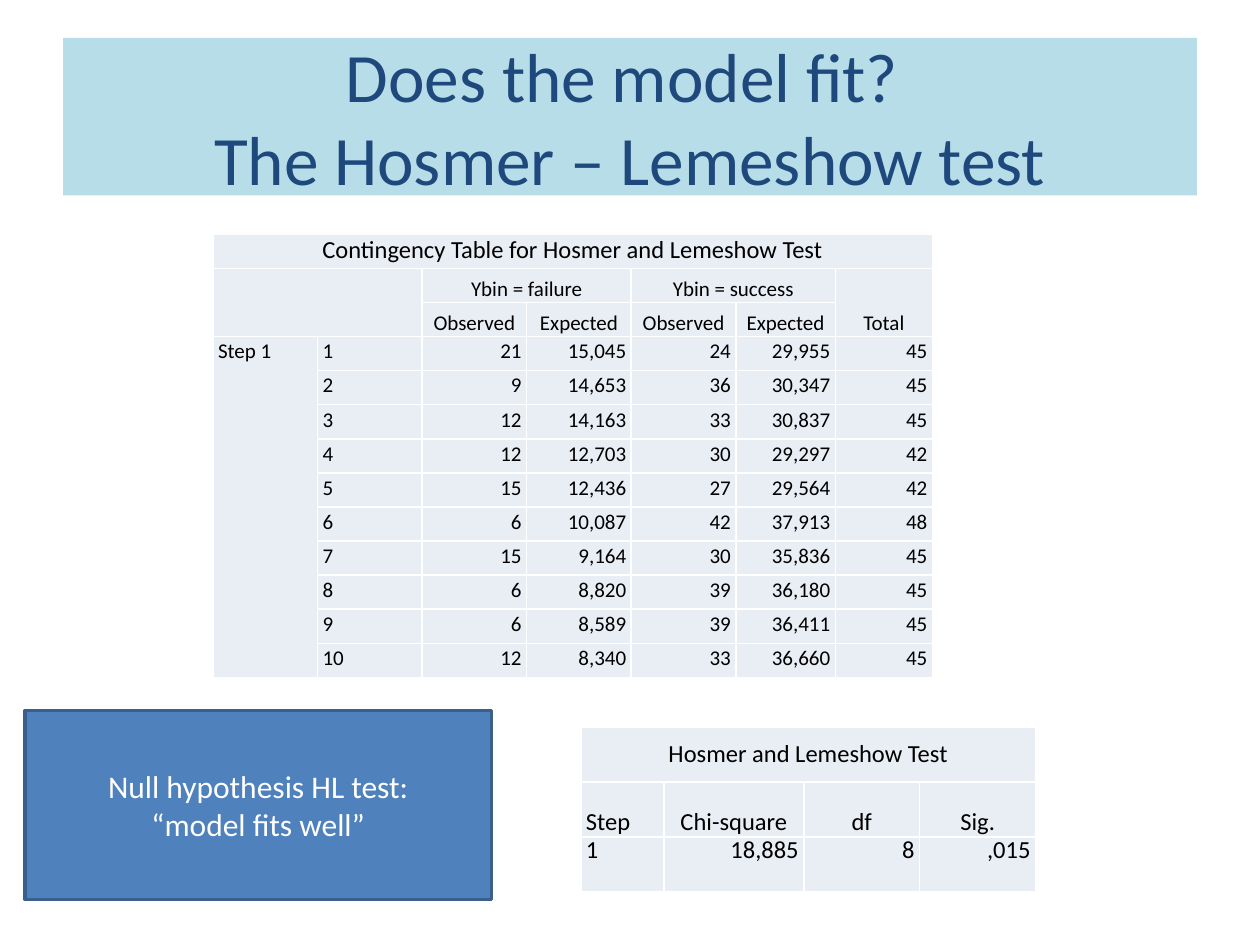
from dataclasses import dataclass

from lxml.etree import SubElement as Sub
from pptx import Presentation
from pptx.dml.color import RGBColor as Rgb
from pptx.enum.shapes import MSO_SHAPE as Kind
from pptx.enum.text import MSO_ANCHOR as Anchor, MSO_AUTO_SIZE as Auto, PP_ALIGN as Align
from pptx.oxml.ns import qn
from pptx.util import Inches, Pt


@dataclass(frozen=True)
class Theme:
    font: str = "Calibri"
    band: str = "B7DEE8"
    navy: str = "1F497D"
    cell: str = "E9EDF4"
    blue: str = "4F81BD"
    edge: str = "3A5F8C"
    white: str = "FFFFFF"
    black: str = "000000"
    title: float = 39.6
    note: float = 18
    large: float = 14
    small: float = 12
    line: float = 16
    indent: float = 0.04


@dataclass(frozen=True)
class Box:
    left: float
    top: float
    width: float
    height: float

    def place(self) -> tuple:
        return tuple(map(Inches, (self.left, self.top, self.width, self.height)))


@dataclass(frozen=True)
class Grid:
    box: Box
    cols: tuple
    rows: tuple
    spans: tuple
    heads: int
    labels: int
    size: float


LOOK = Theme()

FIT = Grid(
    box=Box(1.69, 1.86, 5.71, 3.52),
    cols=(0.83,) * 5 + (0.79, 0.77),
    rows=(
        ("Contingency Table for Hosmer and Lemeshow Test", "", "", "", "", "", ""),
        ("", "", "Ybin = failure", "", "Ybin = success", "", "Total"),
        ("", "", "Observed", "Expected", "Observed", "Expected", ""),
        ("Step 1", "1", "21", "15,045", "24", "29,955", "45"),
        ("", "2", "9", "14,653", "36", "30,347", "45"),
        ("", "3", "12", "14,163", "33", "30,837", "45"),
        ("", "4", "12", "12,703", "30", "29,297", "42"),
        ("", "5", "15", "12,436", "27", "29,564", "42"),
        ("", "6", "6", "10,087", "42", "37,913", "48"),
        ("", "7", "15", "9,164", "30", "35,836", "45"),
        ("", "8", "6", "8,820", "39", "36,180", "45"),
        ("", "9", "6", "8,589", "39", "36,411", "45"),
        ("", "10", "12", "8,340", "33", "36,660", "45"),
    ),
    spans=((0, 0, 0, 6), (1, 0, 2, 1), (1, 2, 1, 3), (1, 4, 1, 5), (1, 6, 2, 6), (3, 0, 12, 0)),
    heads=3,
    labels=2,
    size=LOOK.small,
)

TEST = Grid(
    box=Box(4.61, 5.77, 3.61, 1.31),
    cols=(0.66, 1.11, 0.92, 0.92),
    rows=(
        ("Hosmer and Lemeshow Test", "", "", ""),
        ("Step", "Chi-square", "df", "Sig."),
        ("1", "18,885", "8", ",015"),
    ),
    spans=((0, 0, 0, 3),),
    heads=2,
    labels=1,
    size=LOOK.large,
)


def paint(fill, color: str) -> None:
    fill.solid()
    fill.fore_color.rgb = Rgb.from_string(color)


def write(para, text: str, size: float, color: str) -> None:
    run = para.add_run()
    run.text = text
    run.font.name = LOOK.font
    run.font.size = Pt(size)
    run.font.color.rgb = Rgb.from_string(color)


def border(cell) -> None:
    props = cell._tc.get_or_add_tcPr()
    for side in ("lnL", "lnR", "lnT", "lnB"):
        line = Sub(props, qn(f"a:{side}"), w=str(Pt(1)))
        Sub(Sub(line, qn("a:solidFill")), qn("a:srgbClr"), val=LOOK.white)


def style(cell, text: str, size: float, align: Align, anchor: Anchor) -> None:
    border(cell)
    paint(cell.fill, LOOK.cell)
    cell.margin_left = cell.margin_right = cell.margin_top = cell.margin_bottom = 0
    cell.vertical_anchor = anchor
    para = cell.text_frame.paragraphs[0]
    para.alignment = align
    para.line_spacing = Pt(LOOK.line)
    props = para._p.get_or_add_pPr()
    for side in ("marL", "marR"):
        props.set(side, str(Inches(LOOK.indent)))
    if text:
        write(para, text, size, LOOK.black)


def layout(grid: Grid, row: int, col: int) -> tuple:
    if row == 0:
        return LOOK.large, Align.CENTER, Anchor.MIDDLE
    head = row < grid.heads
    align = Align.LEFT if col < grid.labels else Align.CENTER if head else Align.RIGHT
    return grid.size, align, Anchor.BOTTOM if head else Anchor.TOP


def tabulate(slide, grid: Grid) -> None:
    table = slide.shapes.add_table(len(grid.rows), len(grid.cols), *grid.box.place()).table
    table.first_row = table.horz_banding = False
    for col, width in zip(table.columns, grid.cols):
        col.width = Inches(width)
    for r, row in enumerate(grid.rows):
        for c, text in enumerate(row):
            style(table.cell(r, c), text, *layout(grid, r, c))
    for top, left, end, right in grid.spans:
        table.cell(top, left).merge(table.cell(end, right))


def head(slide, box: Box, lines: tuple) -> None:
    title = slide.shapes.title
    title.left, title.top, title.width, title.height = box.place()
    paint(title.fill, LOOK.band)
    frame = title.text_frame
    frame.auto_size = Auto.NONE
    frame.vertical_anchor = Anchor.MIDDLE
    para = frame.paragraphs[0]
    para.alignment = Align.CENTER
    for i, text in enumerate(lines):
        if i:
            para.add_line_break()
        write(para, text, LOOK.title, LOOK.navy)


def note(slide, box: Box, lines: tuple) -> None:
    shape = slide.shapes.add_shape(Kind.RECTANGLE, *box.place())
    shape.shadow.inherit = False
    paint(shape.fill, LOOK.blue)
    paint(shape.line.fill, LOOK.edge)
    shape.line.width = Pt(2)
    frame = shape.text_frame
    frame.word_wrap = True
    frame.vertical_anchor = Anchor.MIDDLE
    for i, text in enumerate(lines):
        para = frame.add_paragraph() if i else frame.paragraphs[0]
        para.alignment = Align.CENTER
        write(para, text, LOOK.note, LOOK.white)


def main() -> None:
    """Build the slide on the Hosmer and Lemeshow test."""
    deck = Presentation()
    deck.slide_width, deck.slide_height = Inches(10), Inches(7.5)
    slide = deck.slides.add_slide(deck.slide_layouts[5])
    head(slide, Box(0.5, 0.3, 9, 1.25), ("Does the model fit? ", "The Hosmer – Lemeshow test"))
    for grid in (FIT, TEST):
        tabulate(slide, grid)
    note(slide, Box(0.2, 5.64, 3.7, 1.5), ("Null hypothesis HL test:", "“model fits well”"))
    deck.save("out.pptx")


if __name__ == "__main__":
    main()
